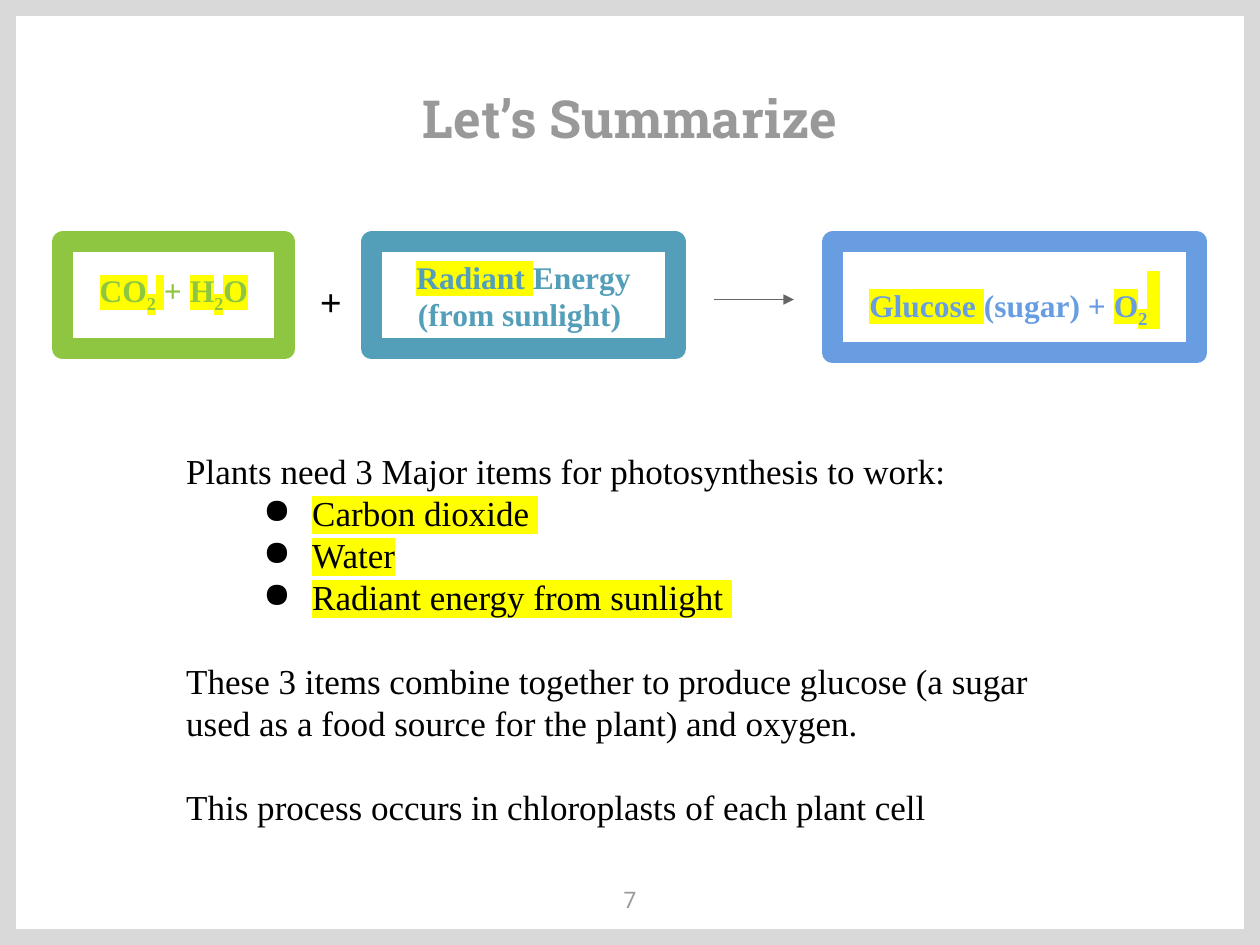
from dataclasses import dataclass
from typing import Optional, Sequence

from lxml.etree import SubElement
from pptx import Presentation
from pptx.dml.color import RGBColor
from pptx.enum.shapes import MSO_CONNECTOR, MSO_SHAPE
from pptx.enum.text import MSO_ANCHOR, PP_ALIGN
from pptx.oxml.ns import qn
from pptx.util import Inches, Pt

WIDTH, HEIGHT = 10, 7.5
SERIF = "Times New Roman"
GREY, BLACK, YELLOW = "999999", "000000", "FFFF00"
LEADING = 1.2


@dataclass(frozen=True)
class Area:
    """A rectangle in percent of the slide's width and height."""
    left: float
    top: float
    width: float
    height: float

    def lengths(self) -> tuple:
        return (across(self.left), down(self.top),
                across(self.width), down(self.height))


@dataclass(frozen=True)
class Span:
    text: str
    marked: bool = False
    subscript: bool = False
    size: Optional[float] = None


@dataclass(frozen=True)
class Line:
    spans: Sequence[Span]
    bullet: bool = False
    gap: bool = False


@dataclass(frozen=True)
class Term:
    area: Area
    color: str
    spans: Sequence[Span]
    leading: float = 18 * LEADING


TERMS = [
    Term(Area(5, 25.6, 17.6, 11.33), "8EC641", [
        Span("CO", True), Span("2", True, True), Span(" ", True), Span("+ "),
        Span("H", True), Span("2", True, True), Span("O", True)]),
    Term(Area(29.5, 25.6, 24.1, 11.33), "539EB9", [
        Span("Radiant ", True), Span("Energy (from sunlight) ")]),
    Term(Area(66.1, 25.6, 28.9, 11.73), "689EE1", [
        Span("Glucose ", True), Span("(sugar) + "), Span("O", True),
        Span("2", True, True), Span(" ", True, size=30)], 30 * LEADING),
]

SUMMARY = [
    Line([Span("Plants need 3 Major items for photosynthesis to work:")]),
    *[Line([Span(item, True)], bullet=True)
      for item in ("Carbon dioxide ", "Water", "Radiant energy from sunlight ")],
    Line([Span("These 3 items combine together to produce glucose (a sugar used "
               "as a food source for the plant) and oxygen.")], gap=True),
    Line([Span("This process occurs in chloroplasts of each plant cell")], gap=True),
]


def across(percent: float) -> int:
    return Inches(WIDTH * percent / 100)


def down(percent: float) -> int:
    return Inches(HEIGHT * percent / 100)


def rgb(color: str) -> RGBColor:
    return RGBColor.from_string(color)


def add_bullet(para) -> None:
    properties = para._p.get_or_add_pPr()
    properties.set("marL", str(Inches(1)))
    properties.set("indent", str(Inches(-0.39)))
    color = SubElement(properties, qn("a:buClr"))
    SubElement(color, qn("a:srgbClr"), val=BLACK)
    SubElement(properties, qn("a:buChar"), char="●")


def add_highlight(run) -> None:
    properties = run._r.get_or_add_rPr()
    highlight = SubElement(properties, qn("a:highlight"))
    SubElement(highlight, qn("a:srgbClr"), val=YELLOW)
    properties.find(qn("a:solidFill")).addnext(highlight)


def write(box, lines: Sequence[Line], *, size: float, color: str, font: str = SERIF,
          bold: bool = False, align=PP_ALIGN.LEFT, anchor=MSO_ANCHOR.TOP,
          leading: Optional[float] = None) -> None:
    frame = box.text_frame
    frame.word_wrap = True
    frame.vertical_anchor = anchor
    frame.margin_left = frame.margin_right = Inches(0.1)
    frame.margin_top = frame.margin_bottom = Inches(0.1)
    for index, line in enumerate(lines):
        para = frame.add_paragraph() if index else frame.paragraphs[0]
        para.alignment = align
        if leading:
            para.line_spacing = Pt(leading)
        if line.gap:
            para.space_before = Pt(size * LEADING)
        if line.bullet:
            add_bullet(para)
        for span in line.spans:
            run = para.add_run()
            run.text = span.text
            run.font.size = Pt(span.size or size)
            run.font.bold = bold
            run.font.color.rgb = rgb(color)
            run.font.name = font
            if span.marked:
                add_highlight(run)
            if span.subscript:
                run._r.get_or_add_rPr().set("baseline", "-25000")


def add_text(page, area: Area, lines: Sequence[Line], **style) -> None:
    write(page.shapes.add_textbox(*area.lengths()), lines, **style)


def add_frame(page, area: Area, color: str, weight: float):
    """Add an unfilled rectangle with a thick outline."""
    box = page.shapes.add_shape(MSO_SHAPE.RECTANGLE, *area.lengths())
    box.shadow.inherit = False
    box.fill.background()
    box.line.color.rgb = rgb(color)
    box.line.width = Pt(weight)
    return box


def add_term(page, term: Term) -> None:
    box = add_frame(page, term.area, term.color, 12)
    write(box, [Line(term.spans)], size=18, color=term.color, bold=True,
          align=PP_ALIGN.CENTER, anchor=MSO_ANCHOR.MIDDLE, leading=term.leading)


def add_arrow(page, start: float, end: float, level: float) -> None:
    arrow = page.shapes.add_connector(MSO_CONNECTOR.STRAIGHT, across(start),
                                      down(level), across(end), down(level))
    arrow.line.color.rgb = rgb("666666")
    arrow.line.width = Pt(0.75)
    SubElement(arrow.line._get_or_add_ln(), qn("a:tailEnd"), type="triangle")
    SubElement(arrow._element.spPr, qn("a:effectLst"))


def main() -> None:
    deck = Presentation()
    deck.slide_width, deck.slide_height = Inches(WIDTH), Inches(HEIGHT)
    page = deck.slides.add_slide(deck.slide_layouts[6])

    add_frame(page, Area(0, 0, 100, 100), "D9D9D9", 18)
    add_text(page, Area(5, 7.2, 90, 9.87), [Line([Span("Let’s Summarize")])],
             size=30, color=GREY, font="Roboto Slab", bold=True,
             align=PP_ALIGN.CENTER, anchor=MSO_ANCHOR.BOTTOM)
    for term in TERMS:
        add_term(page, term)
    add_text(page, Area(24.4, 28.13, 3.3, 6.27), [Line([Span("+")])],
             size=22, color=BLACK, bold=True, leading=22 * LEADING)
    add_arrow(page, 56.7, 63, 31.7)
    add_text(page, Area(13.8, 46.27, 72.4, 46), SUMMARY,
             size=20, color=BLACK, leading=20 * LEADING)
    add_text(page, Area(47.5, 92.4, 5, 7.6), [Line([Span("7")])],
             size=13, color=GREY, font="Roboto", align=PP_ALIGN.CENTER)
    deck.save("out.pptx")


if __name__ == "__main__":
    main()
